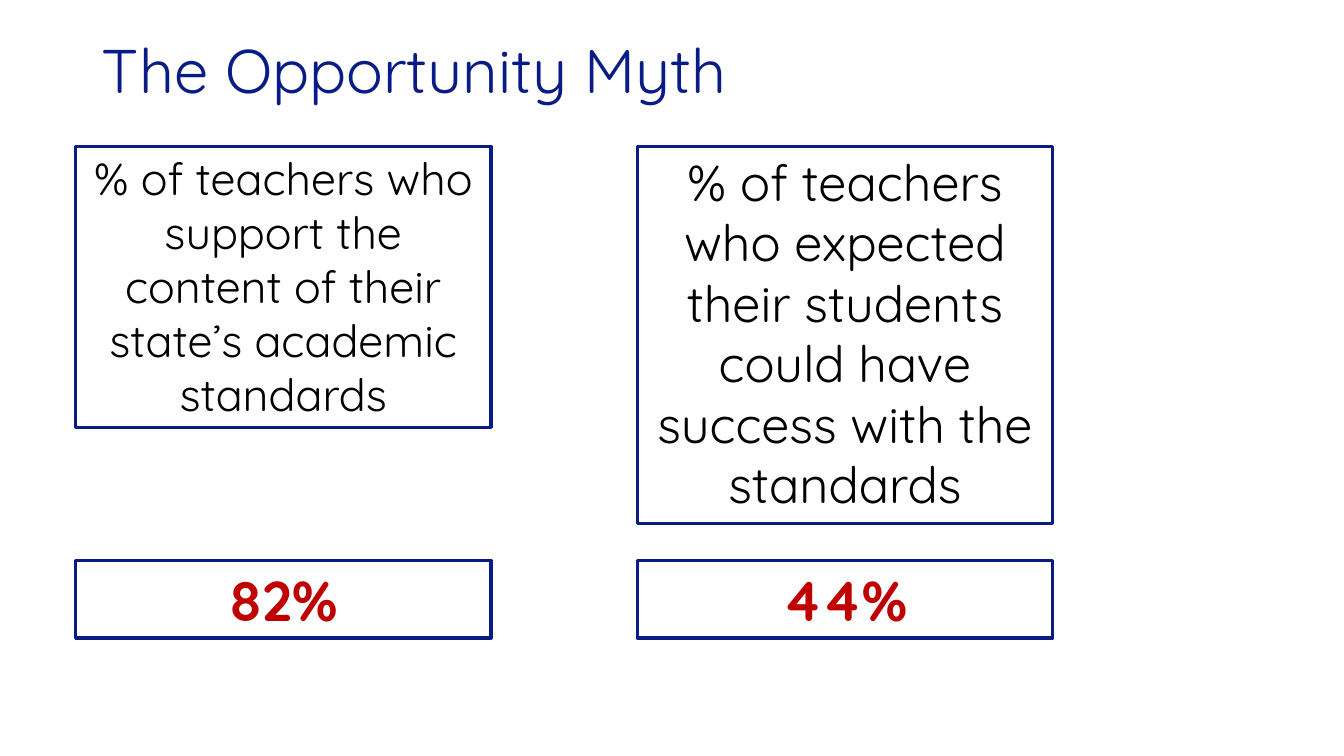
import pptx
import pptx.util
import pptx.dml.color
import pptx.enum.shapes
import pptx.enum.text

Inches = pptx.util.Inches
ALIGN = pptx.enum.text.PP_ALIGN
ANCHOR = pptx.enum.text.MSO_ANCHOR
FIT = pptx.enum.text.MSO_AUTO_SIZE

COLORS = {"navy": "091C86", "red": "C00000", "black": "000000"}
FONT = "Quicksand"

# Slide grid, in inches
SLIDE_W, SLIDE_H = 13.33, 7.5
LEFT, TOP = 0.75, 1.45
COL_W, COL_STEP = 4.12, 5.57
VALUE_OFFSET, VALUE_H = 4.11, 0.77

# Statement, text size, box height, share of teachers
FINDINGS = [
    ("% of teachers who support the content of their state’s academic standards",
     32, 2.79, "82%"),
    ("% of teachers who expected their students could have success with the standards",
     36, 3.74, "44%"),
]


def rgb(name):
    return pptx.dml.color.RGBColor.from_string(COLORS[name])


def style_paragraph(p, size, color, align, bold=False):
    p.alignment = align
    for r in p.runs:
        r.font.name = FONT
        r.font.size = pptx.util.Pt(size)
        r.font.bold = bold
        r.font.color.rgb = rgb(color)


def add_title(s, text, x, y, w, h):
    sp = s.shapes.title
    sp.left, sp.top, sp.width, sp.height = map(Inches, (x, y, w, h))
    tf = sp.text_frame
    tf.text = text
    tf.auto_size = FIT.NONE
    tf.word_wrap = True
    tf.vertical_anchor = ANCHOR.MIDDLE
    tf.margin_left = Inches(0.26)
    p = tf.paragraphs[0]
    p.line_spacing = 0.9
    style_paragraph(p, 44, "navy", ALIGN.LEFT)


def add_box(s, text, x, y, w, h, size, color, bold=False):
    sp = s.shapes.add_shape(pptx.enum.shapes.MSO_SHAPE.RECTANGLE,
                            *map(Inches, (x, y, w, h)))
    sp.shadow.inherit = False
    sp.fill.background()
    sp.line.color.rgb = rgb("navy")
    sp.line.width = pptx.util.Pt(2.25)
    tf = sp.text_frame
    tf.text = text
    tf.word_wrap = True
    tf.auto_size = FIT.SHAPE_TO_FIT_TEXT
    tf.vertical_anchor = ANCHOR.TOP
    style_paragraph(tf.paragraphs[0], size, color, ALIGN.CENTER, bold)


def add_finding(s, finding, x, y, w):
    statement, size, height, value = finding
    add_box(s, statement, x, y, w, height, size, "black")
    add_box(s, value, x, y + VALUE_OFFSET, w, VALUE_H, 40, "red", bold=True)


def main():
    prs = pptx.Presentation()
    prs.slide_width, prs.slide_height = Inches(SLIDE_W), Inches(SLIDE_H)
    s = prs.slides.add_slide(prs.slide_layouts.get_by_name("Title Only"))
    add_title(s, "The Opportunity Myth", LEFT, 0, 11.5, TOP)
    # One column per finding
    for col, finding in enumerate(FINDINGS):
        add_finding(s, finding, LEFT + col * COL_STEP, TOP, COL_W)
    prs.save("out.pptx")


if __name__ == "__main__":
    main()
